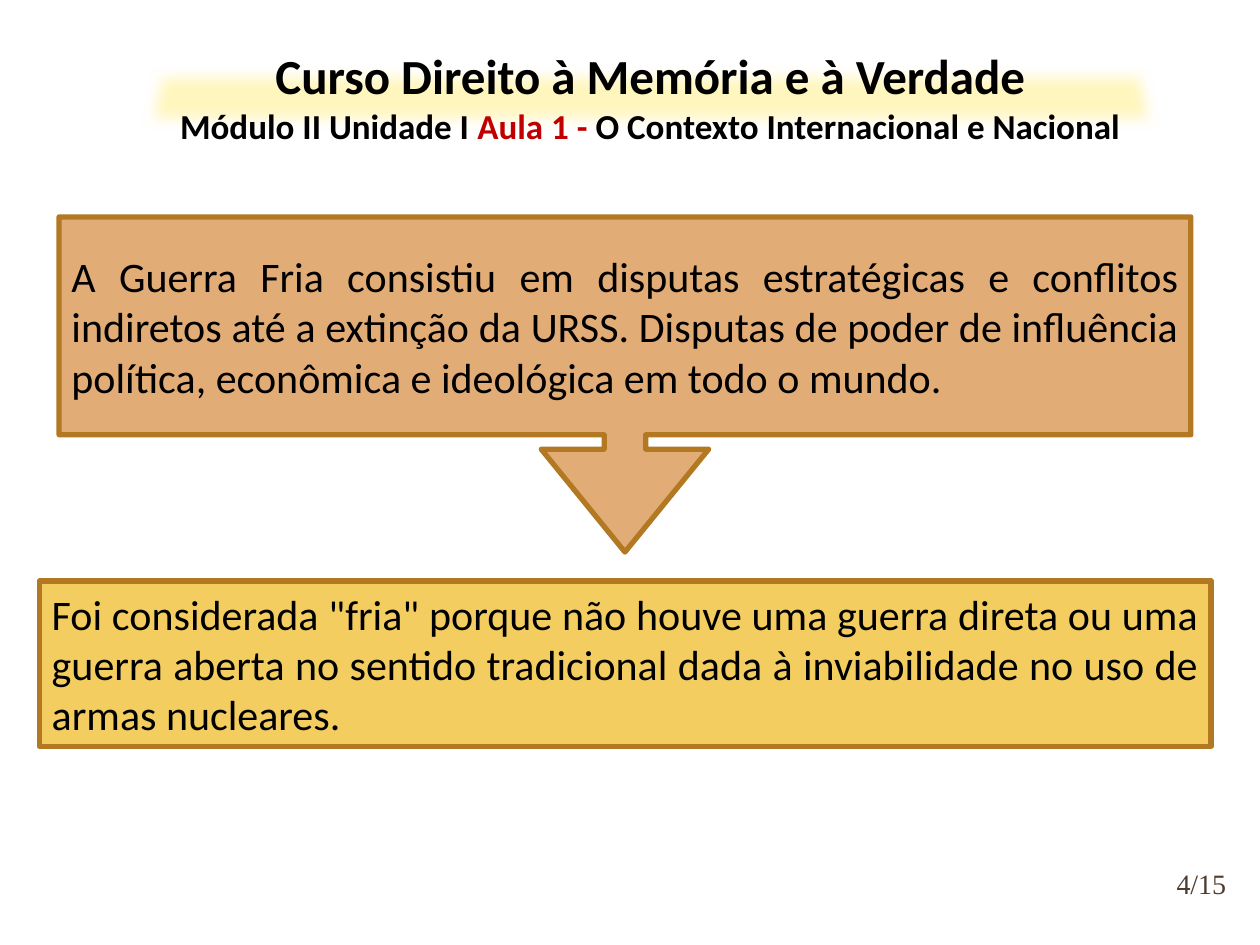
from dataclasses import dataclass

from lxml import etree
from pptx import Presentation
from pptx.dml.color import RGBColor
from pptx.enum.shapes import MSO_SHAPE
from pptx.enum.text import MSO_ANCHOR, MSO_AUTO_SIZE, PP_ALIGN
from pptx.oxml.ns import qn
from pptx.util import Pt

RECT = MSO_SHAPE.RECTANGLE
CALLOUT = MSO_SHAPE.DOWN_ARROW_CALLOUT
TOP, MIDDLE = MSO_ANCHOR.TOP, MSO_ANCHOR.MIDDLE
CENTER, JUSTIFY = PP_ALIGN.CENTER, PP_ALIGN.JUSTIFY
NO_FIT = MSO_AUTO_SIZE.NONE


@dataclass(frozen=True)
class Theme:
    font: str = "Calibri"
    serif: str = "Times New Roman"
    ink: str = "000000"
    accent: str = "C00000"
    brown: str = "4E3B30"
    edge: str = "B27822"
    orange: str = "E2AC76"
    yellow: str = "F3CD60"
    glow: str = "FFF6BE"
    head: int = 28
    sub: int = 20
    body: int = 24
    page: int = 16
    line: int = 3


def rgb(code):
    return RGBColor.from_string(code)


class Deck:
    def __init__(self, theme, slide):
        self.theme = theme
        self.slide = slide

    def style(self, para, size, align, color=None, font=None, bold=False):
        para.alignment = align
        face = para.font
        face.name = font or self.theme.font
        face.size = Pt(size)
        face.bold = bold
        face.color.rgb = rgb(color or self.theme.ink)

    def band(self, points, blur):
        """Draw a pale band with soft edges, behind the title."""
        first, *rest = [(Pt(x), Pt(y)) for x, y in points]
        pen = self.slide.shapes.build_freeform(*first)
        pen.add_line_segments(rest, close=True)
        shape = pen.convert_to_shape()
        shape.fill.solid()
        shape.fill.fore_color.rgb = rgb(self.theme.glow)
        shape.line.fill.background()
        effects = etree.SubElement(shape.element.spPr, qn("a:effectLst"))
        etree.SubElement(effects, qn("a:softEdge"), rad=str(Pt(blur)))
        self.slide.shapes.title.element.addprevious(shape.element)

    def title(self, box, head, parts):
        """Fill the title with a heading and a line of coloured parts."""
        shape = self.slide.shapes.title
        shape.left, shape.top, shape.width, shape.height = map(Pt, box)
        frame = shape.text_frame
        frame.auto_size = NO_FIT
        frame.vertical_anchor = TOP
        para = frame.paragraphs[0]
        para.text = head
        self.style(para, self.theme.head, CENTER, bold=True)
        para = frame.add_paragraph()
        self.style(para, self.theme.sub, CENTER, bold=True)
        for text, color in parts:
            run = para.add_run()
            run.text = text
            run.font.color.rgb = rgb(color)

    def panel(self, kind, box, fill, text, adjust=()):
        """Add an outlined shape with justified text."""
        shape = self.slide.shapes.add_shape(kind, *map(Pt, box))
        for index, value in enumerate(adjust):
            shape.adjustments[index] = value
        shape.shadow.inherit = False
        shape.fill.solid()
        shape.fill.fore_color.rgb = rgb(fill)
        shape.line.color.rgb = rgb(self.theme.edge)
        shape.line.width = Pt(self.theme.line)
        frame = shape.text_frame
        frame.word_wrap = True
        frame.vertical_anchor = MIDDLE
        para = frame.paragraphs[0]
        para.text = text
        self.style(para, self.theme.body, JUSTIFY)

    def page(self, box, text):
        """Add the page count."""
        frame = self.slide.shapes.add_textbox(*map(Pt, box)).text_frame
        frame.word_wrap = True
        frame.vertical_anchor = MIDDLE
        frame.margin_left = frame.margin_right = 0
        frame.margin_top = frame.margin_bottom = 0
        para = frame.paragraphs[0]
        para.text = text
        self.style(para, self.theme.page, CENTER,
                   self.theme.brown, self.theme.serif)


def main():
    prs = Presentation()
    prs.slide_width, prs.slide_height = Pt(720), Pt(540)
    theme = Theme()
    deck = Deck(theme, prs.slides.add_slide(prs.slide_layouts[5]))

    # Heading over its soft band
    deck.band([(86, 38), (657, 38), (665, 74), (78, 74)], 7)
    deck.title((73.5, 22.3, 596, 65.5), "Curso Direito à Memória e à Verdade", [
        ("Módulo II Unidade I ", theme.ink),
        ("Aula 1 - ", theme.accent),
        ("O Contexto Internacional e Nacional", theme.ink),
    ])

    # Statement, then its explanation
    deck.panel(RECT, (22.5, 332, 669.5, 94.5), theme.yellow,
               'Foi considerada "fria" porque não houve uma guerra direta ou '
               "uma guerra aberta no sentido tradicional dada à "
               "inviabilidade no uso de armas nucleares.")
    deck.panel(CALLOUT, (33.75, 124, 646.75, 191.5), theme.orange,
               "A Guerra Fria consistiu em disputas estratégicas e conflitos "
               "indiretos até a extinção da URSS. Disputas de poder de "
               "influência política, econômica e ideológica em todo o mundo.",
               (0.124, 0.25, 0.307, 0.65))

    # Page count
    deck.page((662.5, 487, 48, 36), "4/15")
    prs.save("out.pptx")


if __name__ == "__main__":
    main()
